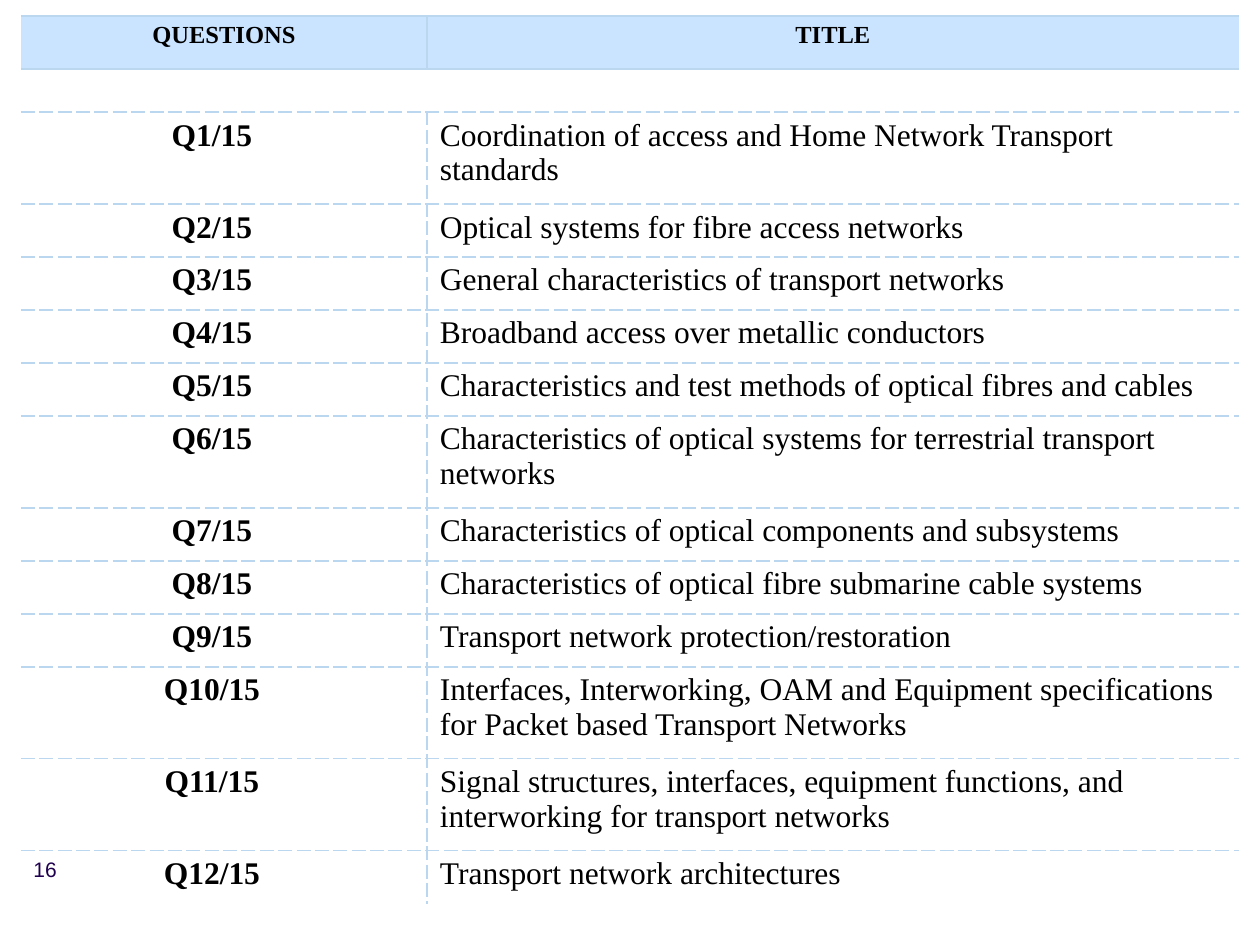
from lxml.etree import SubElement
from pptx import Presentation
from pptx.dml.color import RGBColor
from pptx.enum.text import PP_ALIGN
from pptx.oxml.ns import qn
from pptx.util import Pt

PX = 914400 // 126
LEFT, TOP = 21, 16
WIDTHS = [406, 812]
HEAD, GAP, ONE, TWO = 53, 43, 53, 92
NO_STYLE = "{2D5ABB26-0587-4C30-8999-92F81FD0307C}"

ROWS = [
    ("Q1/15", "Coordination of access and Home Network Transport standards", TWO),
    ("Q2/15", "Optical systems for fibre access networks", ONE),
    ("Q3/15", "General characteristics of transport networks", ONE),
    ("Q4/15", "Broadband access over metallic conductors", ONE),
    ("Q5/15", "Characteristics and test methods of optical fibres and cables", ONE),
    ("Q6/15", "Characteristics of optical systems for terrestrial transport networks", TWO),
    ("Q7/15", "Characteristics of optical components and subsystems", ONE),
    ("Q8/15", "Characteristics of optical fibre submarine cable systems", ONE),
    ("Q9/15", "Transport network protection/restoration", ONE),
    ("Q10/15", "Interfaces, Interworking, OAM and Equipment specifications "
               "for Packet based Transport Networks", TWO),
    ("Q11/15", "Signal structures, interfaces, equipment functions, and "
               "interworking for transport networks", TWO),
    ("Q12/15", "Transport network architectures", ONE),
]


def write(par, text, size, face, tone, bold=False):
    run = par.add_run()
    run.text = text
    run.font.size = Pt(size)
    run.font.name = face
    run.font.bold = bold
    run.font.color.rgb = RGBColor.from_string(tone)


def edge(cell, sides):
    props = cell._tc.get_or_add_tcPr()
    spot = 0
    for side in ("L", "R", "T", "B"):
        if side not in sides:
            continue
        line = SubElement(props, qn("a:ln" + side), w=str(Pt(1)))
        fill = SubElement(line, qn("a:solidFill"))
        SubElement(fill, qn("a:srgbClr"), val="BBD6EF")
        SubElement(line, qn("a:prstDash"), val=sides[side])
        props.insert(spot, line)
        spot += 1


deck = Presentation()
deck.slide_width = 1260 * PX
deck.slide_height = 945 * PX
slide = deck.slides.add_slide(deck.slide_layouts[6])

box = slide.shapes.add_textbox(LEFT * PX, 850 * PX, 94 * PX, 66 * PX)
box.text_frame.word_wrap = True
write(box.text_frame.paragraphs[0], "16", 12, "Arial", "1F004E")

lines = [("QUESTIONS", "TITLE", HEAD), ("", "", GAP)] + ROWS
tall = sum(line[2] for line in lines)
frame = slide.shapes.add_table(len(lines), 2, LEFT * PX, TOP * PX,
                               sum(WIDTHS) * PX, tall * PX)
grid = frame.table
grid.first_row = False
grid.horz_banding = False
grid._tbl.tblPr.find(qn("a:tableStyleId")).text = NO_STYLE
for col, wide in zip(grid.columns, WIDTHS):
    col.width = wide * PX

last = len(lines) - 1
for row, (code, title, high) in enumerate(lines):
    grid.rows[row].height = high * PX
    for col, text in enumerate((code, title)):
        cell = grid.cell(row, col)
        pad = 0 if row == 1 else 6
        cell.margin_left = cell.margin_right = pad * PX
        cell.margin_top = cell.margin_bottom = pad * PX
        if row == 0:
            cell.fill.solid()
            cell.fill.fore_color.rgb = RGBColor.from_string("CAE4FF")
        else:
            cell.fill.background()
        if row > 1 and col == 0:
            cell.margin_right = 30 * PX
        if row > 1 and col == 1:
            cell.margin_left = 13 * PX

        sides = {"T": "solid" if row < 2 else "dash"}
        if row < last:
            sides["B"] = "solid" if row == 0 else "dash"
        if row != 1:
            sides["R" if col == 0 else "L"] = "solid" if row == 0 else "dash"
        edge(cell, sides)

        if text:
            par = cell.text_frame.paragraphs[0]
            mid = row == 0 or col == 0
            par.alignment = PP_ALIGN.CENTER if mid else PP_ALIGN.LEFT
            write(par, text, 14 if row == 0 else 18, "Times New Roman", "000000", mid)

deck.save("out.pptx")
